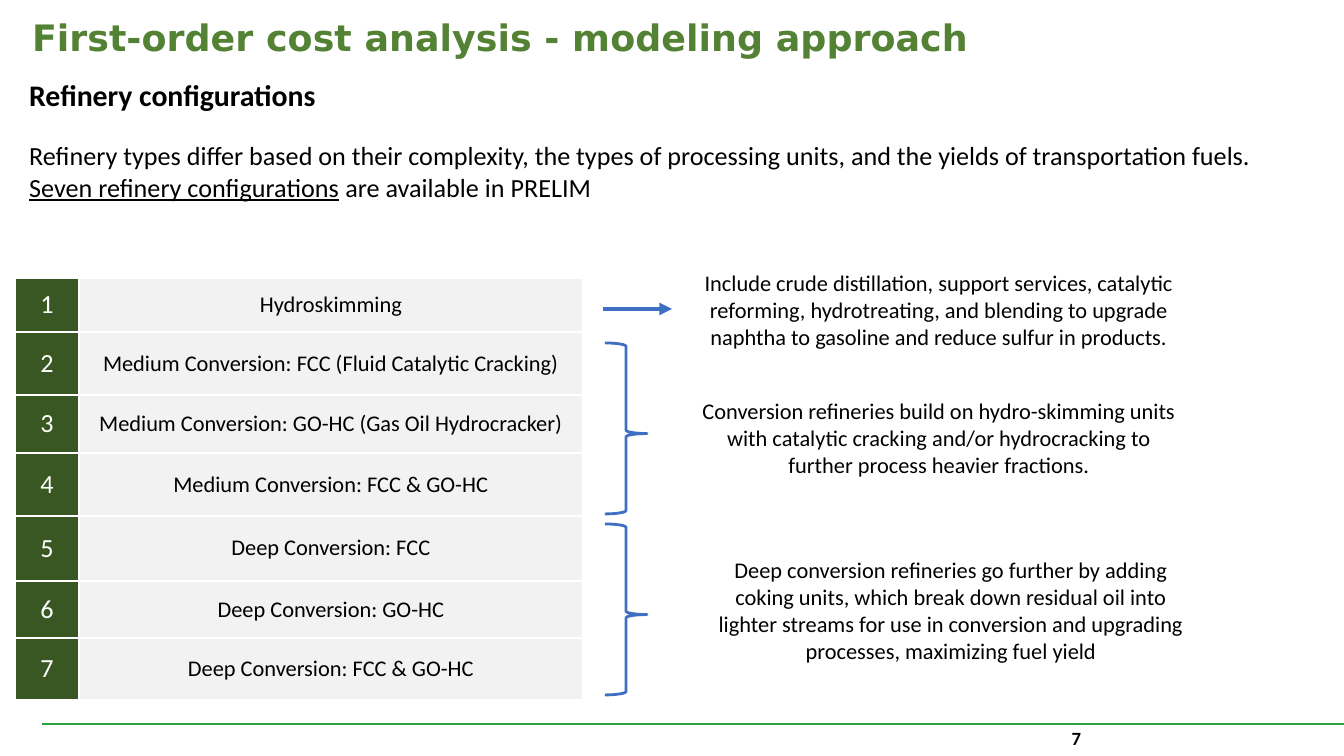
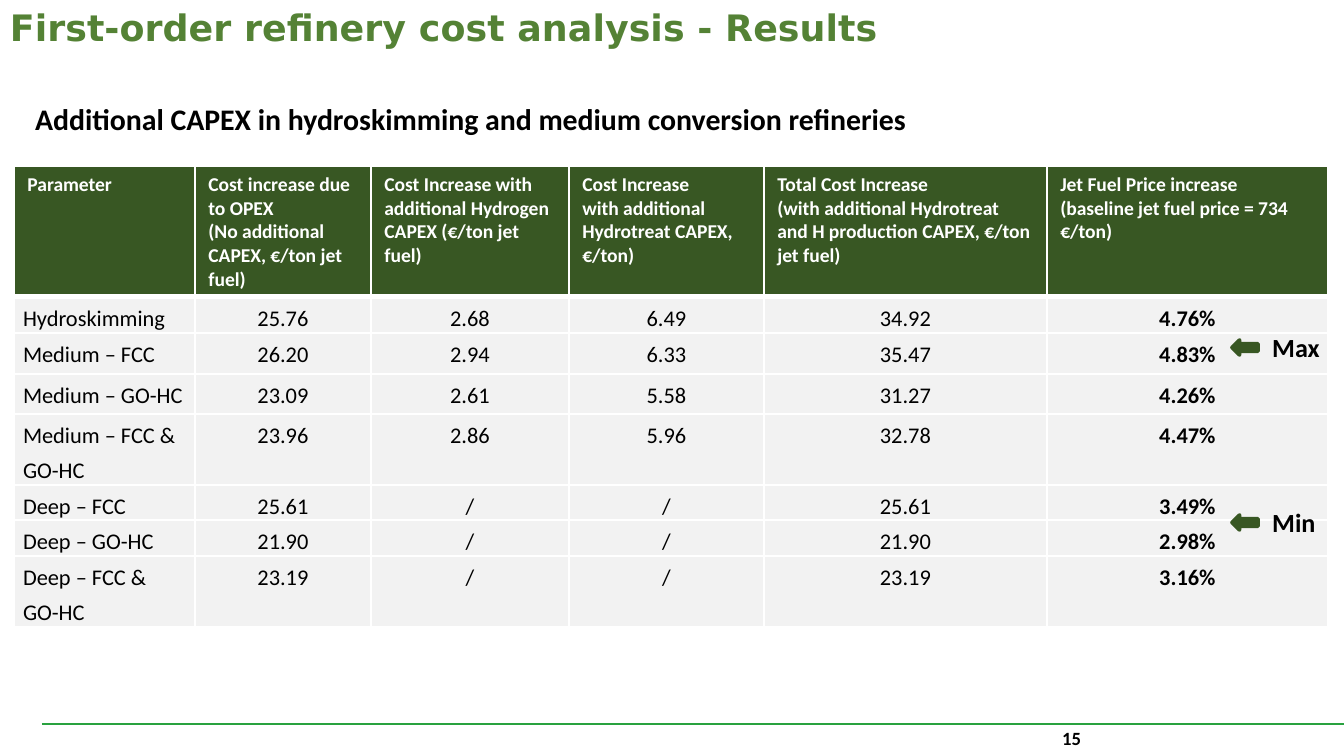
import pptx
import pptx.dml.color
import pptx.enum.shapes
import pptx.enum.text
import pptx.oxml
import pptx.oxml.ns
import pptx.util

PX = 914400 / 134.4  # EMU in one px

TITLE_GREEN = pptx.dml.color.RGBColor(0x54, 0x82, 0x35)
DARK_GREEN = pptx.dml.color.RGBColor(0x38, 0x57, 0x23)
FOOTER_GREEN = pptx.dml.color.RGBColor(0x29, 0xA2, 0x3F)
BLUE = pptx.dml.color.RGBColor(0x3F, 0x6F, 0xC3)
GRAY = pptx.dml.color.RGBColor(0xF2, 0xF2, 0xF2)
WHITE = pptx.dml.color.RGBColor(0xFF, 0xFF, 0xFF)
BLACK = pptx.dml.color.RGBColor(0, 0, 0)

ALIGN = pptx.enum.text.PP_ALIGN
MIDDLE = pptx.enum.text.MSO_ANCHOR.MIDDLE
SHAPE = pptx.enum.shapes.MSO_SHAPE
STRAIGHT = pptx.enum.shapes.MSO_CONNECTOR.STRAIGHT
NAMESPACE = pptx.oxml.ns.nsdecls("a")


def px(*lengths):
    return [pptx.util.Emu(round(length * PX)) for length in lengths]


def write(frame, text, size=12, color=BLACK, bold=False, font="Calibri",
          align=ALIGN.LEFT, line_spacing=None, space_after=None, append=False):
    """Write one paragraph per line; words between underscores are underlined."""
    frame.word_wrap = True
    for index, line in enumerate(text.split("\n")):
        new = append or index > 0
        paragraph = frame.add_paragraph() if new else frame.paragraphs[0]
        paragraph.alignment = align
        paragraph.line_spacing = line_spacing
        if space_after is not None:
            paragraph.space_after = pptx.util.Pt(space_after)
        for part, words in enumerate(line.split("_")):
            if words:
                run = paragraph.add_run()
                run.text = words
                run.font.size = pptx.util.Pt(size)
                run.font.name = font
                run.font.bold = bold
                run.font.underline = part % 2 == 1
                run.font.color.rgb = color


presentation = pptx.Presentation()
presentation.slide_width, presentation.slide_height = px(1344, 756)
layout = presentation.slide_layouts[5]

# Titles, page numbers and the footer line
pages = [
    ("First-order cost analysis - modeling approach", 22, 11, "7"),
    ("First-order refinery cost analysis - Results", 0, 1, "15"),
]
for title_text, left, top, number in pages:
    slide = presentation.slides.add_slide(layout)
    title = slide.shapes.title
    title.left, title.top, title.width, title.height = px(left, top, 1302, 58)
    number_box = slide.shapes.add_textbox(*px(1008, 727, 83, 23))
    for shape in (title, number_box):
        frame = shape.text_frame
        frame.vertical_anchor = MIDDLE
        frame.margin_left, frame.margin_right = px(10, 10)
        frame.margin_top, frame.margin_bottom = px(5, 5)
    title.text_frame.auto_size = pptx.enum.text.MSO_AUTO_SIZE.NONE
    write(title.text_frame, title_text, size=19.5, color=TITLE_GREEN, bold=True,
          font="DejaVu Sans", line_spacing=0.9)
    write(number_box.text_frame, number, size=10, bold=True, align=ALIGN.RIGHT)

configuration_slide, result_slide = presentation.slides

footer_line = configuration_slide.shapes.add_connector(STRAIGHT, *px(42, 724, 1344, 724))
footer_line.line.color.rgb = FOOTER_GREEN
footer_line.line.width = pptx.util.Pt(1.5)

# Slide 1: introduction
introduction = configuration_slide.shapes.add_textbox(*px(16, 70, 1308, 140)).text_frame
write(introduction, "Refinery configurations", size=16, bold=True, space_after=14.6)
write(introduction,
      "Refinery types differ based on their complexity, the types of processing units, "
      "and the yields of transportation fuels.\n"
      "_Seven refinery configurations_ are available in PRELIM", size=14, append=True)

# Slide 1: numbered configurations
configurations = [
    "Hydroskimming",
    "Medium Conversion: FCC (Fluid Catalytic Cracking)",
    "Medium Conversion: GO-HC (Gas Oil Hydrocracker)",
    "Medium Conversion: FCC & GO-HC",
    "Deep Conversion: FCC",
    "Deep Conversion: GO-HC",
    "Deep Conversion: FCC & GO-HC",
]
configuration_table = configuration_slide.shapes.add_table(7, 2, *px(15, 278, 568, 424)).table
for index, name in enumerate(configurations):
    number_cell, name_cell = configuration_table.rows[index].cells
    write(number_cell.text_frame, str(index + 1), size=14, color=WHITE, align=ALIGN.CENTER)
    write(name_cell.text_frame, name, align=ALIGN.CENTER)
    number_cell.vertical_anchor = name_cell.vertical_anchor = MIDDLE

# Slide 1: explanations, with an arrow and two braces
explanations = [
    (687, 263, 95, "Include crude distillation, support services, catalytic reforming, "
     "hydrotreating, and blending to upgrade naphtha to gasoline and reduce sulfur in products."),
    (687, 391, 95, "Conversion refineries build on hydro-skimming units with catalytic cracking "
     "and/or hydrocracking to further process heavier fractions."),
    (699, 550, 122, "Deep conversion refineries go further by adding coking units, which break "
     "down residual oil into lighter streams for use in conversion and upgrading processes, "
     "maximizing fuel yield"),
]
for left, top, height, text in explanations:
    box = configuration_slide.shapes.add_textbox(*px(left, top, 504, height))
    write(box.text_frame, text, align=ALIGN.CENTER)

arrow = configuration_slide.shapes.add_connector(STRAIGHT, *px(603, 309, 672, 309))
arrow.line.color.rgb = BLUE
arrow.line.width = pptx.util.Pt(2.25)
arrow.line._get_or_add_ln().append(
    pptx.oxml.parse_xml(f'<a:tailEnd {NAMESPACE} type="triangle"/>'))
for connector in (footer_line, arrow):
    connector.element.spPr.append(pptx.oxml.parse_xml(f"<a:effectLst {NAMESPACE}/>"))

# The footer line belongs to the layout, so every slide shows it
footer_line.element.nvCxnSpPr.cNvPr.set("id", "20")
layout.shapes.element.append(footer_line.element)

for top in (343, 524):
    brace = configuration_slide.shapes.add_shape(SHAPE.RIGHT_BRACE, *px(605, top, 42, 171))
    brace.shadow.inherit = False
    brace.adjustments[0], brace.adjustments[1] = 0.08, 0.53
    brace.fill.background()
    brace.line.color.rgb = BLUE
    brace.line.width = pptx.util.Pt(1.5)

# Slide 2: cost table
headers = [
    "Parameter",
    "Cost increase due to OPEX\n(No additional CAPEX, €/ton jet fuel)",
    "Cost Increase with additional Hydrogen CAPEX (€/ton jet fuel)",
    "Cost Increase\nwith additional Hydrotreat CAPEX, €/ton)",
    "Total Cost Increase\n(with additional Hydrotreat and H production CAPEX, €/ton jet fuel)",
    "Jet Fuel Price increase\n(baseline jet fuel price = 734 €/ton)",
]
results = [
    ("Hydroskimming", "25.76", "2.68", "6.49", "34.92", "4.76%"),
    ("Medium – FCC", "26.20", "2.94", "6.33", "35.47", "4.83%"),
    ("Medium – GO-HC", "23.09", "2.61", "5.58", "31.27", "4.26%"),
    ("Medium – FCC & GO-HC", "23.96", "2.86", "5.96", "32.78", "4.47%"),
    ("Deep – FCC", "25.61", "/", "/", "25.61", "3.49%"),
    ("Deep – GO-HC", "21.90", "/", "/", "21.90", "2.98%"),
    ("Deep – FCC & GO-HC", "23.19", "/", "/", "23.19", "3.16%"),
]
result_table = result_slide.shapes.add_table(8, 6, *px(14, 166, 1316, 461)).table
for cell, header in zip(result_table.rows[0].cells, headers):
    write(cell.text_frame, header, size=10.5, color=WHITE, bold=True)
for row, values in enumerate(results, start=1):
    for column, value in enumerate(values):
        cell = result_table.cell(row, column)
        cell.margin_left, cell.margin_right, cell.margin_top, cell.margin_bottom = px(9, 9, 0, 0)
        write(cell.text_frame, value, bold=column == 5, line_spacing=1.3, space_after=8,
              align=ALIGN.CENTER if column else ALIGN.LEFT)

# Both tables: sizes, white borders and fills
table_formats = [
    (configuration_table, [64, 504], [54, 63, 58, 63, 65, 57, 62]),
    (result_table, [181, 176, 198, 195, 283, 281], [131, 36, 41, 40, 71, 35, 36, 71]),
]
for table, widths, heights in table_formats:
    table.first_row = table.horz_banding = False
    for column, width in zip(table.columns, px(*widths)):
        column.width = width
    for row, height in zip(table.rows, px(*heights)):
        row.height = height
    for row_index, row in enumerate(table.rows):
        for column_index, cell in enumerate(row.cells):
            is_header = table is result_table and row_index == 0
            is_number = table is configuration_table and column_index == 0
            for side in "LRTB":
                points = 3 if is_header and side == "B" else 1
                cell._tc.get_or_add_tcPr().append(pptx.oxml.parse_xml(
                    f'<a:ln{side} {NAMESPACE} w="{points * 12700}"><a:solidFill>'
                    f'<a:srgbClr val="{WHITE}"/></a:solidFill></a:ln{side}>'))
            cell.fill.solid()
            cell.fill.fore_color.rgb = DARK_GREEN if is_header or is_number else GRAY

# Slide 2: heading and the marks for the extremes
heading = result_slide.shapes.add_textbox(*px(22, 94, 1141, 50))
write(heading.text_frame, "Additional CAPEX in hydroskimming and medium conversion refineries",
      size=16, bold=True)
for label, top in (("Max", 325), ("Min", 500)):
    pointer = result_slide.shapes.add_shape(SHAPE.RIGHT_ARROW, *px(1232, top + 15, 26, 15))
    pointer.rotation = 180
    pointer.shadow.inherit = False
    pointer.fill.solid()
    pointer.fill.fore_color.rgb = pointer.line.color.rgb = DARK_GREEN
    pointer.line.width = pptx.util.Pt(2)
    label_box = result_slide.shapes.add_textbox(*px(1259, top, 85, 46))
    write(label_box.text_frame, label, size=14, bold=True)

presentation.save("out.pptx")
